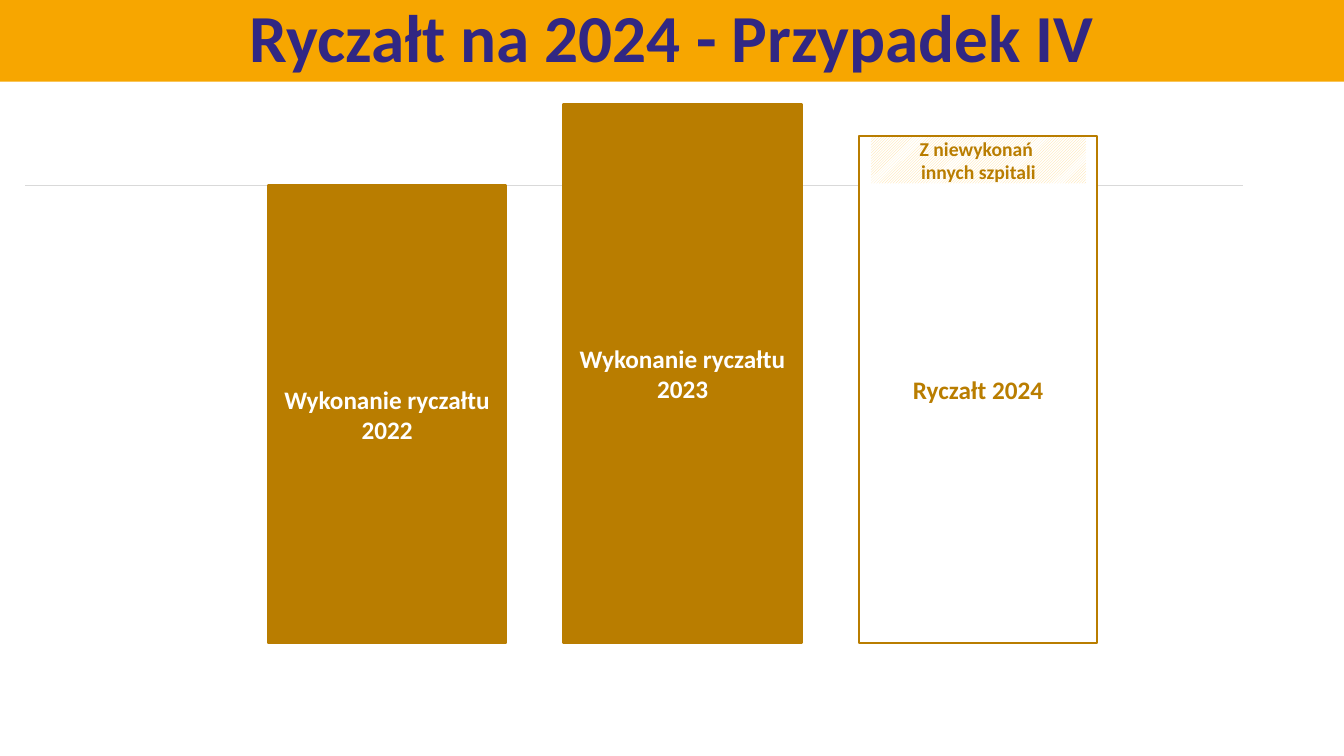
"""Build the slide comparing lump-sum bars for 2022, 2023 and 2024."""
from lxml import etree
from pptx import Presentation
from pptx.dml.color import RGBColor
from pptx.enum.dml import MSO_PATTERN
from pptx.enum.shapes import MSO_CONNECTOR, MSO_SHAPE
from pptx.enum.text import MSO_ANCHOR, PP_ALIGN
from pptx.oxml.ns import qn
from pptx.util import Inches, Pt

RECTANGLE = MSO_SHAPE.RECTANGLE
STRAIGHT = MSO_CONNECTOR.STRAIGHT
HATCH = MSO_PATTERN.DARK_UPWARD_DIAGONAL
MIDDLE = MSO_ANCHOR.MIDDLE
CENTER = PP_ALIGN.CENTER

COLORS = {"banner": "F7A600", "title": "312783", "bar": "B97D00",
          "white": "FFFFFF", "hatch": "FFDD96", "guide": "D9D9D9"}
FONT = "Calibri"
SLIDE_WIDTH, SLIDE_HEIGHT = 13.33, 7.5
BANNER_HEIGHT = 0.81
FIRST_LEFT, BAR_WIDTH, COLUMN_STEP = 2.66, 2.36, 2.93
BASELINE, GUIDE_TOP = 6.38, 1.84
OUTLINE = 1.75
NOTE_INSET, NOTE_WIDTH, NOTE_HEIGHT = 0.12, 2.13, 0.46
BARS = [
    ("Wykonanie ryczałtu 2022", GUIDE_TOP, "bar", "white"),
    ("Wykonanie ryczałtu 2023", 1.03, "bar", "white"),
    ("Ryczałt 2024", 1.35, "white", "bar"),
]


def color(name):
    return RGBColor.from_string(COLORS[name])


def column_left(column):
    return FIRST_LEFT + column * COLUMN_STEP


def add_box(slide, box, fill, text, size, text_color, outline=None):
    shape = slide.shapes.add_shape(RECTANGLE, *map(Inches, box))
    shape.shadow.inherit = False
    shape.fill.solid()
    shape.fill.fore_color.rgb = color(fill)
    if outline:
        shape.line.color.rgb = color(outline)
        shape.line.width = Pt(OUTLINE)
    else:
        shape.line.fill.background()
    frame = shape.text_frame
    frame.word_wrap = True
    frame.vertical_anchor = MIDDLE
    frame.text = text
    paragraph = frame.paragraphs[0]
    paragraph.alignment = CENTER
    paragraph.font.name = FONT
    paragraph.font.size = Pt(size)
    paragraph.font.bold = True
    paragraph.font.color.rgb = color(text_color)
    return shape


def add_guide(slide, left, right, top):
    guide = slide.shapes.add_connector(
        STRAIGHT, Inches(left), Inches(top), Inches(right), Inches(top))
    guide.line.color.rgb = color("guide")
    guide.line.width = Pt(0.5)
    etree.SubElement(guide._element.spPr, qn("a:effectLst"))


def add_title(slide, text):
    banner = add_box(slide, (0, 0, SLIDE_WIDTH, BANNER_HEIGHT),
                     "banner", text, 48, "title")
    banner.text_frame.paragraphs[0].line_spacing = 0.9


def add_bar(slide, column, text, top, fill, text_color):
    box = (column_left(column), top, BAR_WIDTH, BASELINE - top)
    add_box(slide, box, fill, text, 18, text_color, outline="bar")


def add_note(slide, column, top, text):
    box = (column_left(column) + NOTE_INSET, top, NOTE_WIDTH, NOTE_HEIGHT)
    note = add_box(slide, box, "white", text, 14, "bar")
    note.fill.patterned()
    note.fill.pattern = HATCH
    note.fill.fore_color.rgb = color("hatch")
    note.fill.back_color.rgb = color("white")


def main():
    presentation = Presentation()
    presentation.slide_width = Inches(SLIDE_WIDTH)
    presentation.slide_height = Inches(SLIDE_HEIGHT)
    slide = presentation.slides.add_slide(presentation.slide_layouts[6])
    add_guide(slide, 0.25, 12.33, GUIDE_TOP)
    add_title(slide, "Ryczałt na 2024 - Przypadek IV")
    for column, bar in enumerate(BARS):
        add_bar(slide, column, *bar)
    add_note(slide, 2, 1.36, "Z niewykonań \vinnych szpitali")
    presentation.save("out.pptx")


if __name__ == "__main__":
    main()
